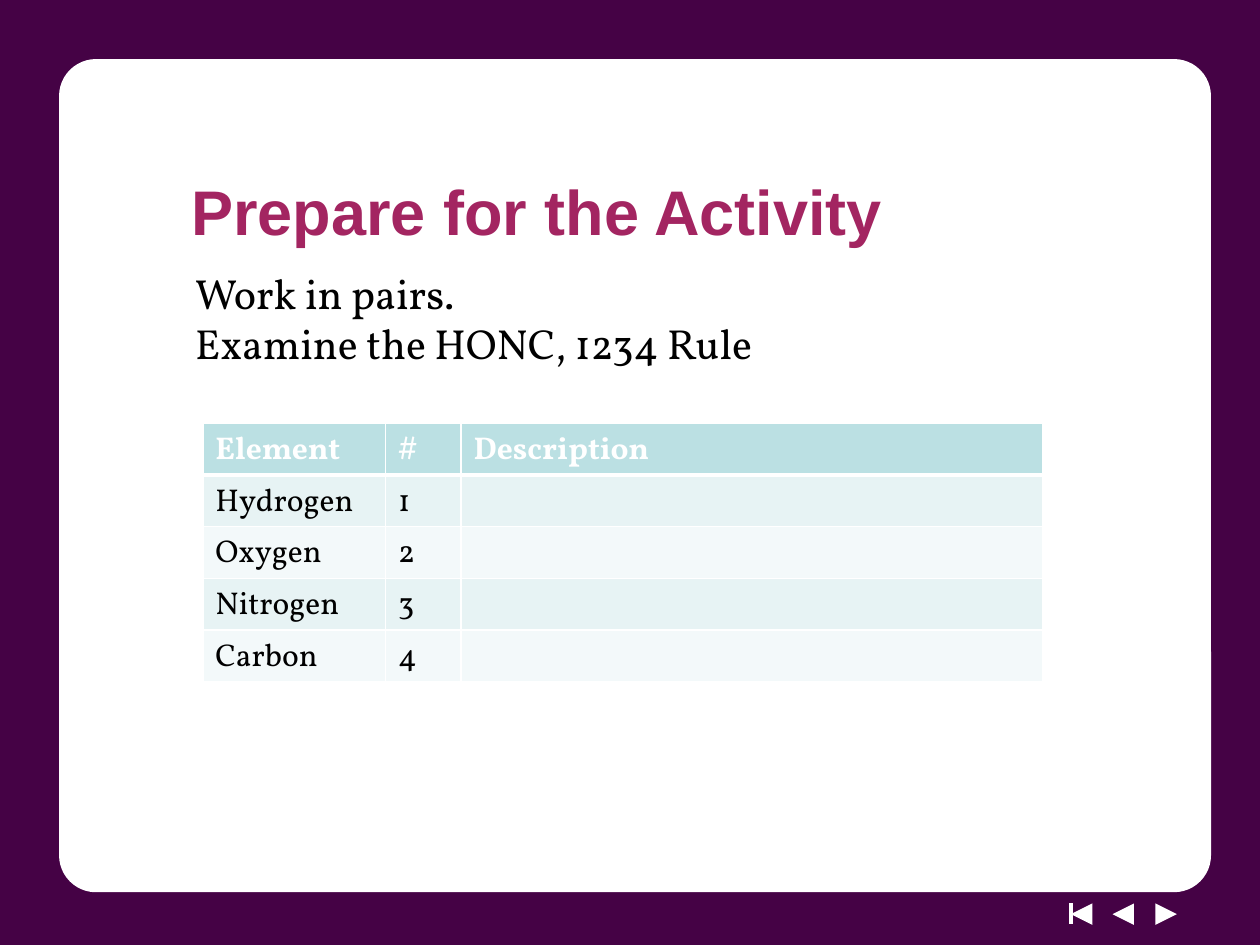
from dataclasses import dataclass

from lxml.etree import SubElement
from pptx import Presentation
from pptx.dml.color import RGBColor
from pptx.enum.shapes import MSO_CONNECTOR as Connector, MSO_SHAPE as Shape
from pptx.enum.text import MSO_ANCHOR as Anchor
from pptx.oxml import parse_xml
from pptx.oxml.ns import nsdecls, qn
from pptx.util import Inches, Pt


@dataclass(frozen=True)
class Theme:
    """Colours, fonts and type sizes of the slide."""
    frame: str = "450245"
    white: str = "FFFFFF"
    title: str = "A32561"
    text: str = "000000"
    header: str = "BBE0E3"
    bands: tuple = ("E7F3F4", "F3F9FA")
    title_font: str = "Arial"
    body_font: str = "Vollkorn"
    title_size: int = 36
    body_size: int = 24
    table_size: int = 18


THEME = Theme()
ELEMENTS = ["Hydrogen", "Oxygen", "Nitrogen", "Carbon"]
ROWS = [["Element", "#", "Description"]] + [
    [name, str(bonds), ""] for bonds, name in enumerate(ELEMENTS, 1)]
COLUMN_WIDTHS = [1.45, 0.6, 4.62]
ROW_HEIGHT = 0.41


def rgb(value):
    """Turn a hex string into a colour."""
    return RGBColor.from_string(value)


def add_panel(slide, kind, box, color, line_width=0, rotation=0, adjustment=None):
    """Add a plain filled shape."""
    shape = slide.shapes.add_shape(kind, *map(Inches, box))
    shape.shadow.inherit = False
    shape.fill.solid()
    shape.fill.fore_color.rgb = rgb(color)
    shape.rotation = rotation
    if adjustment is not None:
        shape.adjustments[0] = adjustment
    if line_width:
        shape.line.color.rgb = rgb(color)
        shape.line.width = Pt(line_width)
    else:
        shape.line.fill.background()


def add_navigation(slide):
    """Add the three navigation arrows and the bar of the first one."""
    top, size = 7.17, 0.17
    for left, rotation in ((9.17, 90), (8.83, 270), (8.5, 270)):
        add_panel(slide, Shape.ISOSCELES_TRIANGLE, (left, top, size, size),
                  THEME.white, rotation=rotation)
    bar = slide.shapes.add_connector(
        Connector.STRAIGHT, *map(Inches, (8.5, top, 8.5, 7.33)))
    bar.line.color.rgb = rgb(THEME.white)
    bar.line.width = Pt(2)
    SubElement(bar._element.spPr, qn("a:effectLst"))


def style_paragraph(paragraph, font_name, size, color, bold=False):
    """Format every run of a paragraph."""
    for run in paragraph.runs:
        run.font.name = font_name
        run.font.size = Pt(size)
        run.font.bold = bold
        run.font.color.rgb = rgb(color)


def add_text(slide, box, lines, font_name, size, color,
             bold=False, anchor=Anchor.TOP, indent=0):
    """Add a wrapping text box with one paragraph per line."""
    text_frame = slide.shapes.add_textbox(*map(Inches, box)).text_frame
    text_frame.word_wrap = True
    text_frame.vertical_anchor = anchor
    text_frame.text = "\n".join(lines)
    for paragraph in text_frame.paragraphs:
        paragraph._p.get_or_add_pPr().set("marL", str(Inches(indent)))
        style_paragraph(paragraph, font_name, size, color, bold)


def set_borders(cell, top, bottom):
    """Draw white cell borders with the given top and bottom widths."""
    properties = cell._tc.get_or_add_tcPr()
    widths = {"lnL": 1, "lnR": 1, "lnT": top, "lnB": bottom}
    for index, (side, width) in enumerate(widths.items()):
        properties.insert(index, parse_xml(
            f'<a:{side} {nsdecls("a")} w="{Pt(width)}"><a:solidFill>'
            f'<a:srgbClr val="{THEME.white}"/></a:solidFill></a:{side}>'))


def style_cell(cell, row_index):
    """Format a cell as part of the header or of a banded row."""
    is_header = row_index == 0
    cell.fill.solid()
    cell.fill.fore_color.rgb = rgb(
        THEME.header if is_header else THEME.bands[(row_index - 1) % 2])
    set_borders(cell, top=3 if row_index == 1 else 1, bottom=3 if is_header else 1)
    paragraph = cell.text_frame.paragraphs[0]
    paragraph.font.size = Pt(THEME.table_size)
    style_paragraph(paragraph, THEME.body_font, THEME.table_size,
                    THEME.white if is_header else THEME.text, is_header)


def add_element_table(slide):
    """Add the table of elements and their numbers."""
    box = (1.61, 3.36, sum(COLUMN_WIDTHS), ROW_HEIGHT * len(ROWS))
    table = slide.shapes.add_table(
        len(ROWS), len(COLUMN_WIDTHS), *map(Inches, box)).table
    for column, width in zip(table.columns, COLUMN_WIDTHS):
        column.width = Inches(width)
    for row_index, values in enumerate(ROWS):
        table.rows[row_index].height = Inches(ROW_HEIGHT)
        for column_index, value in enumerate(values):
            cell = table.cell(row_index, column_index)
            cell.text = value
            style_cell(cell, row_index)


def main():
    """Build and save the slide."""
    presentation = Presentation()
    presentation.slide_width = Inches(10)
    presentation.slide_height = Inches(7.5)
    slide = presentation.slides.add_slide(presentation.slide_layouts[6])
    add_panel(slide, Shape.RECTANGLE, (0, 0, 10, 7.5), THEME.frame)
    add_navigation(slide)
    add_panel(slide, Shape.ROUNDED_RECTANGLE, (0.5, 0.5, 9.08, 6.55),
              THEME.white, line_width=4.5, adjustment=0.04)
    add_text(slide, (1.42, 1.17, 8.08, 1), ["Prepare for the Activity"],
             THEME.title_font, THEME.title_size, THEME.title,
             bold=True, anchor=Anchor.MIDDLE)
    add_text(slide, (1.33, 2.07, 8, 4.25),
             ["Work in pairs.", "Examine the HONC, 1234 Rule"],
             THEME.body_font, THEME.body_size, THEME.text, indent=0.12)
    add_element_table(slide)
    presentation.save("out.pptx")


if __name__ == "__main__":
    main()
